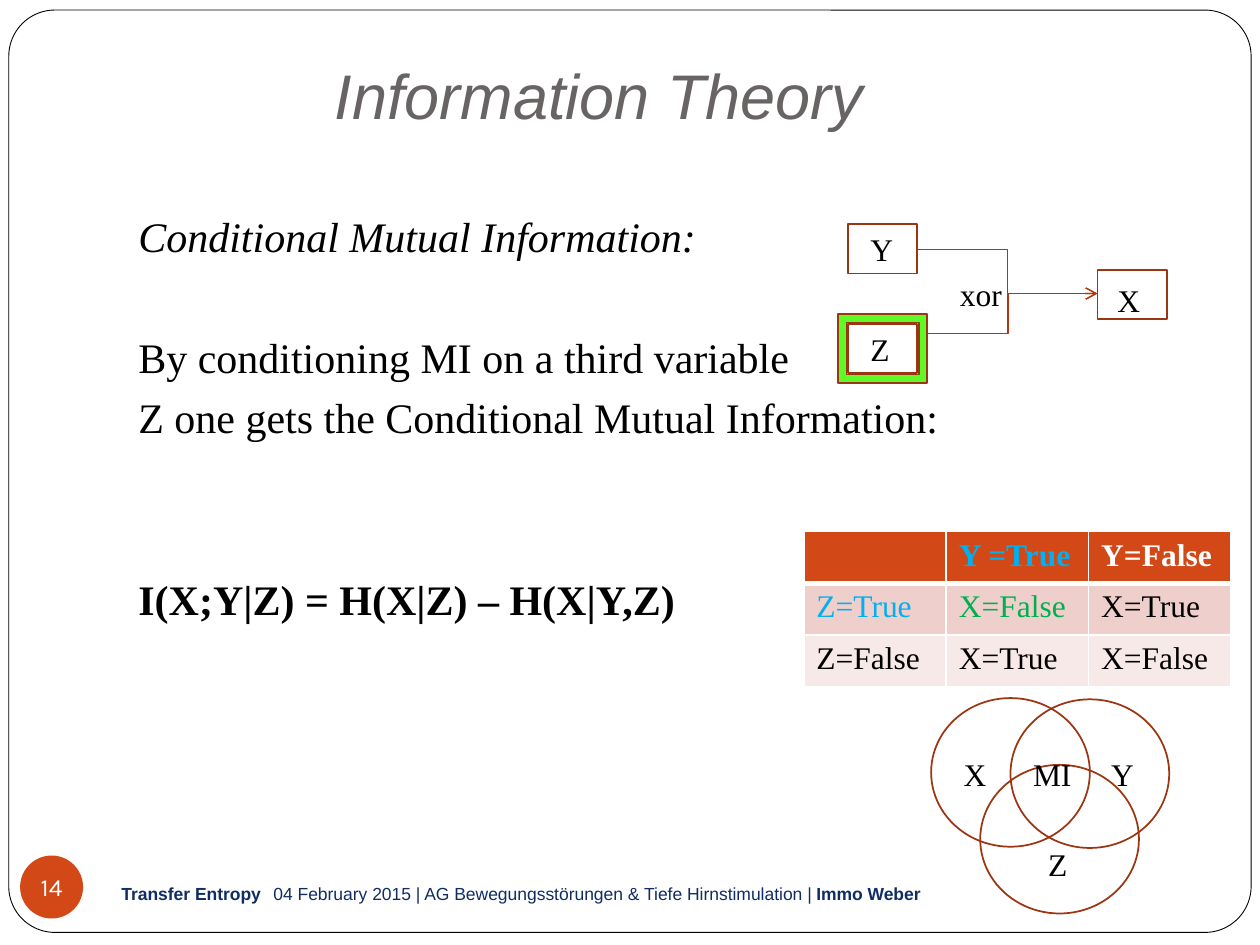
from lxml import etree
from pptx import Presentation
from pptx.dml.color import RGBColor
from pptx.enum.shapes import MSO_CONNECTOR, MSO_SHAPE
from pptx.enum.text import MSO_ANCHOR, PP_ALIGN
from pptx.oxml.ns import qn
from pptx.util import Inches, Pt

RECT, ROUNDED = MSO_SHAPE.RECTANGLE, MSO_SHAPE.ROUNDED_RECTANGLE
OVAL, FRAME = MSO_SHAPE.OVAL, MSO_SHAPE.FRAME
ELBOW = MSO_CONNECTOR.ELBOW
LEFT, CENTER, RIGHT = PP_ALIGN.LEFT, PP_ALIGN.CENTER, PP_ALIGN.RIGHT
TOP, MIDDLE, BOTTOM = MSO_ANCHOR.TOP, MSO_ANCHOR.MIDDLE, MSO_ANCHOR.BOTTOM

WIDTH, HEIGHT = 10, 7.5
SERIF, SANS, NUMBER_FONT = "Times New Roman", "Arial", "Karla"
BLACK, WHITE, NAVY, GREY = "000000", "FFFFFF", "0F2D64", "696464"
ORANGE, OUTLINE, ARROW, LIME = "D34817", "9C3511", "B1360B", "5EF927"
BLUE, GREEN = "00B0F0", "00B050"

LINE_PITCH = 0.48
BODY = [
    (0, "Conditional Mutual Information:", {"italic": True}),
    (2, "By conditioning MI on a third variable", {}),
    (3, "Z one gets the Conditional Mutual Information:", {}),
    (6, "I(X;Y|Z) = H(X|Z) – H(X|Y,Z)", {"bold": True}),
]
GATE_BOXES = [(6.73, 1.78), (6.73, 2.57), (8.71, 2.14)]
GATE_WIRES = [(7.28, 1.98), (7.29, 2.65)]
GATE_END = (8.71, 2.33)
GATE_LABELS = [("X", 8.77, 2.18, 0.4), ("Y", 6.81, 1.78, 0.4),
               ("Z", 6.81, 2.57, 0.4), ("xor", 7.52, 2.13, 0.55)]
VENN_CIRCLES = [(7.39, 5.54), (8.02, 5.55), (7.78, 6.07)]
VENN_LABELS = [("MI", 8.1, 5.94, 0.55), ("X", 7.55, 5.94, 0.31),
               ("Y", 8.72, 5.94, 0.31), ("Z", 8.22, 6.66, 0.31)]
TRUTH_TABLE = [
    (ORANGE, [("", WHITE), ("Y =True", BLUE), ("Y=False", WHITE)]),
    ("EFCFCC", [("Z=True", BLUE), ("X=False", GREEN), ("X=True", BLACK)]),
    ("F7E9E8", [("Z=False", BLACK), ("X=True", BLACK), ("X=False", BLACK)]),
]
COLUMN, ROW = 1.13, 0.41


def color(value):
    return RGBColor.from_string(value)


def add_span(para, text, size=18, font=SERIF, ink=BLACK, bold=False, italic=False):
    span = para.add_run()
    span.text = text
    span.font.size, span.font.name = Pt(size), font
    span.font.bold, span.font.italic = bold, italic
    span.font.color.rgb = color(ink)


def add_text(page, text, left, top, width, height, inset=(0.1, 0.05),
             anchor=TOP, align=LEFT, **style):
    box = page.shapes.add_textbox(*map(Inches, (left, top, width, height)))
    frame = box.text_frame
    frame.word_wrap, frame.vertical_anchor = True, anchor
    frame.margin_left = frame.margin_right = Inches(inset[0])
    frame.margin_top = frame.margin_bottom = Inches(inset[1])
    para = frame.paragraphs[0]
    para.alignment = align
    add_span(para, text, **style)
    return para


def add_outline(page, kind, left, top, width, height, fill=None, line=OUTLINE, weight=1):
    shape = page.shapes.add_shape(kind, *map(Inches, (left, top, width, height)))
    shape.shadow.inherit = False
    if fill:
        shape.fill.solid()
        shape.fill.fore_color.rgb = color(fill)
    else:
        shape.fill.background()
    if line:
        shape.line.color.rgb = color(line)
        shape.line.width = Pt(weight)
    else:
        shape.line.fill.background()
    return shape


def add_wire(page, start, end):
    wire = page.shapes.add_connector(ELBOW, *map(Inches, start + end))
    wire.line.color.rgb = color(ARROW)
    wire.line.width = Pt(0.75)
    etree.SubElement(wire.line._get_or_add_ln(), qn("a:tailEnd"), type="arrow")
    etree.SubElement(wire._element.spPr, qn("a:effectLst"))


def add_borders(cell, bottom):
    props = cell._tc.get_or_add_tcPr()
    for index, (side, weight) in enumerate(
            [("lnL", 1), ("lnR", 1), ("lnT", 1), ("lnB", bottom)]):
        edge = etree.Element(qn("a:" + side), w=str(Pt(weight)))
        fill = etree.SubElement(edge, qn("a:solidFill"))
        etree.SubElement(fill, qn("a:srgbClr"), val=WHITE)
        props.insert(index, edge)


def add_truth_table(page, left, top):
    count = len(TRUTH_TABLE)
    table = page.shapes.add_table(count, count, Inches(left), Inches(top),
                                  Inches(COLUMN * count), Inches(ROW * count)).table
    for index, (fill, entries) in enumerate(TRUTH_TABLE):
        table.rows[index].height = Inches(ROW)
        table.columns[index].width = Inches(COLUMN)
        for position, (text, ink) in enumerate(entries):
            cell = table.cell(index, position)
            cell.fill.solid()
            cell.fill.fore_color.rgb = color(fill)
            add_borders(cell, 3 if index == 0 else 1)
            if text:
                add_span(cell.text_frame.paragraphs[0], text, ink=ink, bold=index == 0)


def add_footer(page):
    style = {"size": 10, "font": SANS, "ink": NAVY}
    add_text(page, "Transfer Entropy", 0.83, 7.01, 1.24, 0.17, inset=(0, 0),
             align=RIGHT, bold=True, **style)
    para = add_text(page, "04 February 2015 | AG Bewegungsstörungen & Tiefe Hirnstimulation | ",
                    2.17, 7.01, 7.5, 0.17, inset=(0, 0), **style)
    add_span(para, "Immo Weber", bold=True, **style)
    badge = add_outline(page, OVAL, 0.16, 6.79, 0.5, 0.5, fill=ORANGE, line=None)
    frame = badge.text_frame
    frame.word_wrap, frame.vertical_anchor = False, MIDDLE
    frame.margin_left = frame.margin_right = frame.margin_top = frame.margin_bottom = 0
    frame.paragraphs[0].alignment = CENTER
    add_span(frame.paragraphs[0], "14", size=14, font=NUMBER_FONT, ink=WHITE)


def main():
    deck = Presentation()
    deck.slide_width, deck.slide_height = Inches(WIDTH), Inches(HEIGHT)
    page = deck.slides.add_slide(deck.slide_layouts[6])
    border = add_outline(page, ROUNDED, 0.07, 0.08, 9.86, 7.32, WHITE, BLACK, 0.5)
    border.adjustments[0] = 0.05
    add_footer(page)
    add_text(page, "Information Theory", 2.56, 0.3, 6.94, 0.8, anchor=BOTTOM,
             size=36, font=SANS, ink=GREY, italic=True)
    for line, text, style in BODY:
        add_text(page, text, 1, 1.62 + line * LINE_PITCH, 8.5, LINE_PITCH, size=24, **style)
    for left, top in GATE_BOXES:
        add_outline(page, RECT, left, top, 0.55, 0.39, fill=WHITE)
    for start in GATE_WIRES:
        add_wire(page, start, GATE_END)
    add_truth_table(page, 6.38, 4.22)
    add_outline(page, FRAME, 6.65, 2.49, 0.71, 0.55, fill=LIME)
    for left, top in VENN_CIRCLES:
        add_outline(page, OVAL, left, top, 1.26, 1.18)
    for text, left, top, width in GATE_LABELS + VENN_LABELS:
        add_text(page, text, left, top, width, 0.4)
    deck.save("out.pptx")


if __name__ == "__main__":
    main()
